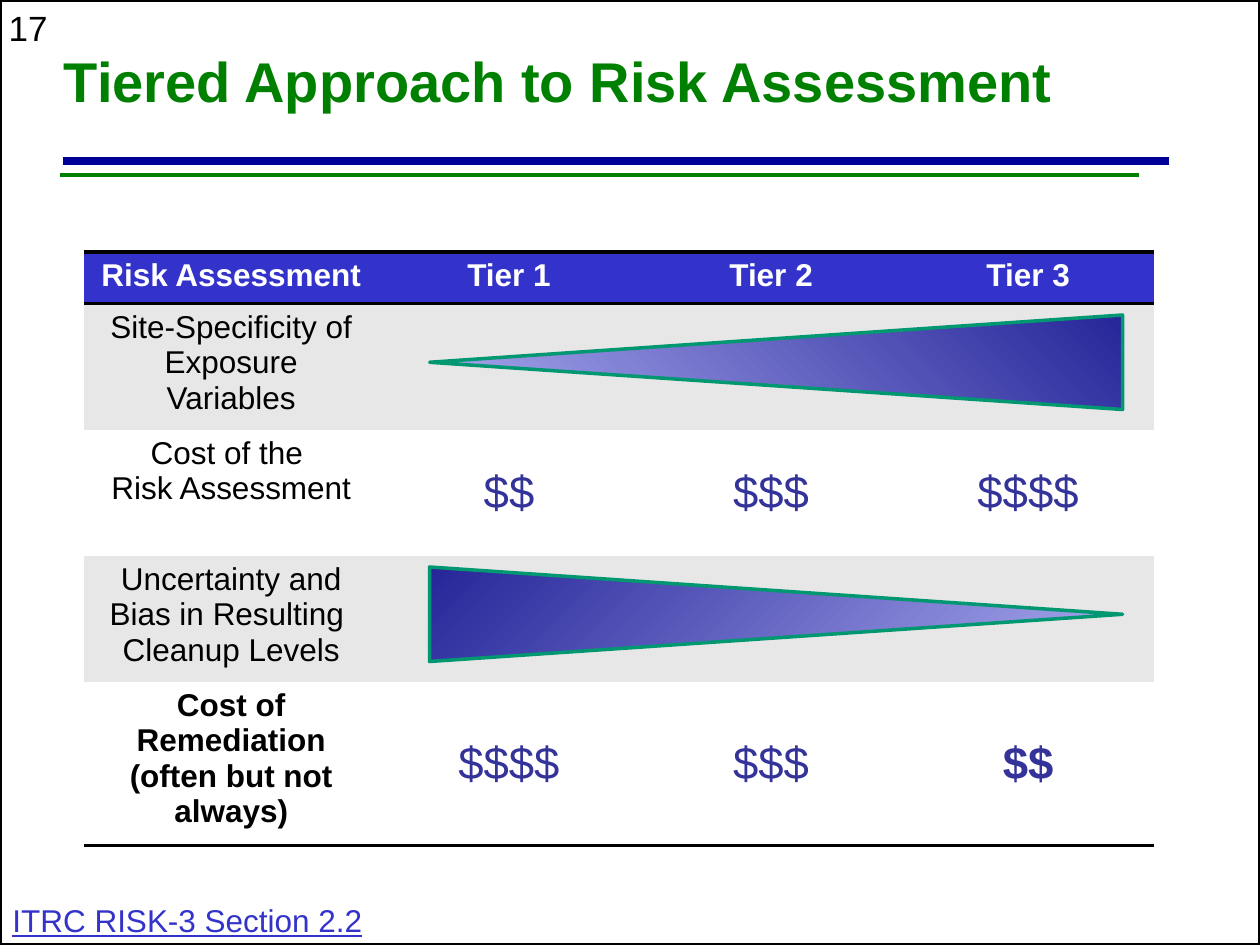
from dataclasses import dataclass

from lxml.etree import SubElement
from pptx import Presentation
from pptx.dml.color import RGBColor
from pptx.enum.shapes import MSO_CONNECTOR as Connector, MSO_SHAPE as Shape
from pptx.enum.text import MSO_ANCHOR as Anchor, PP_ALIGN as Align
from pptx.oxml import parse_xml
from pptx.oxml.ns import nsdecls, qn
from pptx.util import Inches, Pt


@dataclass(frozen=True)
class Theme:
    font: str = "Arial"
    black: str = "000000"
    white: str = "FFFFFF"
    green: str = "008000"
    navy: str = "000099"
    blue: str = "3333CC"
    indigo: str = "333399"
    band: str = "E7E7E7"
    teal: str = "009771"
    taper_dark: str = "262699"
    taper_light: str = "A9A9EF"
    title: int = 32
    cost: int = 26
    number: int = 20
    body: int = 18
    rule: int = 2


THEME = Theme()
NO_STYLE = "{2D5ABB26-0587-4C30-8999-92F81FD0307C}"

HEADER = ["Risk Assessment", "Tier 1", "Tier 2", "Tier 3"]
ROWS = [
    ["Site-Specificity of Exposure Variables", "", "", ""],
    ["Cost of the \nRisk Assessment", "$$", "$$$", "$$$$"],
    ["Uncertainty and Bias in Resulting \nCleanup Levels", "", "", ""],
    ["Cost of Remediation (often but not always)", "$$$$", "$$$", "$$"],
]
BOLD_CELLS = {(0, 0), (0, 1), (0, 2), (0, 3), (4, 0), (4, 3)}
COLUMNS = [2.33, 2.08, 2.08, 2]
HEADER_HEIGHT, ROW_HEIGHT = 0.41, 1


def write(frame, text, size, color, para_format=None, **font_format):
    """Fill a text frame, one paragraph for each line of text."""
    frame.text = text
    values = {"name": THEME.font, "size": Pt(size), **font_format}
    for para in frame.paragraphs:
        for name, value in (para_format or {}).items():
            setattr(para, name, value)
        for name, value in values.items():
            setattr(para.font, name, value)
        para.font.color.rgb = RGBColor.from_string(color)


def add_text(page, box, text, size, color, wrap=False, anchor=Anchor.TOP, **formats):
    frame = page.shapes.add_textbox(*map(Inches, box)).text_frame
    frame.word_wrap, frame.vertical_anchor = wrap, anchor
    write(frame, text, size, color, **formats)


def add_rule(page, left, top, width, color, weight):
    line = page.shapes.add_connector(
        Connector.STRAIGHT, *map(Inches, (left, top, left + width, top)))
    line.line.color.rgb = RGBColor.from_string(color)
    line.line.width = Pt(weight)
    SubElement(line._element.spPr, qn("a:effectLst"))


def add_frame(page, box):
    frame = page.shapes.add_shape(Shape.RECTANGLE, *map(Inches, box))
    frame.shadow.inherit = False
    frame.fill.background()
    frame.line.color.rgb = RGBColor.from_string(THEME.black)
    frame.line.width = Pt(THEME.rule)


def add_heading(page, box):
    left, top, width, height = box
    add_rule(page, left + 0.09, top + 1.18, 8.78, THEME.navy, 4.5)
    add_rule(page, left + 0.07, top + 1.29, 8.56, THEME.green, THEME.rule)
    add_text(page, box, "Tiered Approach to Risk Assessment", THEME.title,
             THEME.green, wrap=True, anchor=Anchor.MIDDLE, bold=True,
             para_format={"line_spacing": 0.85})


def add_border(cell, sides):
    """Draw black rules on the named sides, T or B, of a cell."""
    for position, side in enumerate(sides):
        cell._tc.get_or_add_tcPr().insert(position, parse_xml(
            f'<a:ln{side} {nsdecls("a")} w="{Pt(THEME.rule)}"><a:solidFill>'
            f'<a:srgbClr val="{THEME.black}"/></a:solidFill></a:ln{side}>'))


def add_tier_table(page, box):
    grid = [HEADER, *ROWS]
    graphic = page.shapes.add_table(len(grid), len(HEADER), *map(Inches, box))
    table = graphic.table
    table.first_row = table.horz_banding = False
    table._tbl.tblPr.find(qn("a:tableStyleId")).text = NO_STYLE
    for column, width in zip(table.columns, COLUMNS):
        column.width = Inches(width)

    for r, texts in enumerate(grid):
        table.rows[r].height = Inches(ROW_HEIGHT if r else HEADER_HEIGHT)
        fill = THEME.blue if r == 0 else THEME.band if r % 2 else THEME.white
        for c, text in enumerate(texts):
            cell = table.cell(r, c)
            is_cost = r > 0 and c > 0 and text
            size = THEME.cost if is_cost else THEME.body
            color = (THEME.white if r == 0
                     else THEME.indigo if is_cost else THEME.black)
            cell.fill.solid()
            cell.fill.fore_color.rgb = RGBColor.from_string(fill)
            if is_cost:
                cell.vertical_anchor = Anchor.MIDDLE
            write(cell.text_frame, text, size, color,
                  para_format={"alignment": Align.CENTER},
                  bold=(r, c) in BOLD_CELLS)
            if r == 0:
                add_border(cell, "TB")
            elif r == len(grid) - 1:
                add_border(cell, "B")


def add_taper(page, box, grows):
    """Place a wedge in the box that widens or narrows to the right."""
    left, top, width, height = box
    shift = (width - height) / 2
    taper = page.shapes.add_shape(
        Shape.ISOSCELES_TRIANGLE,
        *map(Inches, (left + shift, top - shift, height, width)))
    taper.rotation = 270 if grows else 90
    if not grows:
        taper._element.spPr.xfrm.set("flipH", "1")
    taper.shadow.inherit = False
    taper.fill.gradient()
    taper.fill.gradient_angle = 135
    shades = (THEME.taper_dark, THEME.taper_light)
    for position, (stop, shade) in enumerate(zip(taper.fill.gradient_stops, shades)):
        stop.position = position
        stop.color.rgb = RGBColor.from_string(shade)
    taper.line.color.rgb = RGBColor.from_string(THEME.teal)
    taper.line.width = Pt(THEME.rule)


def add_tiers(page, box):
    left, top, width, height = box
    add_tier_table(page, box)
    for row, grows in ((0, True), (2, False)):
        row_top = top + HEADER_HEIGHT + row * ROW_HEIGHT
        add_taper(page, (left + 2.74, row_top + 0.09, 5.5, 0.75), grows)


def main():
    deck = Presentation()
    deck.slide_width, deck.slide_height = Inches(10), Inches(7.5)
    page = deck.slides.add_slide(deck.slide_layouts[6])

    # Page number and frame
    add_text(page, (-0.03, 0, 0.54, 0.43), "17", THEME.number, THEME.black)
    add_frame(page, (0, 0, 10, 7.5))
    # Title with its two rules
    add_heading(page, (0.41, 0.1, 8.3, 1.15))
    # Tier comparison
    add_tiers(page, (0.67, 2, sum(COLUMNS), HEADER_HEIGHT + len(ROWS) * ROW_HEIGHT))
    # Section reference
    add_text(page, (0, 7.1, 3.01, 0.4), "ITRC RISK-3 Section 2.2",
             THEME.body, THEME.blue, underline=True)

    deck.save("out.pptx")


if __name__ == "__main__":
    main()
